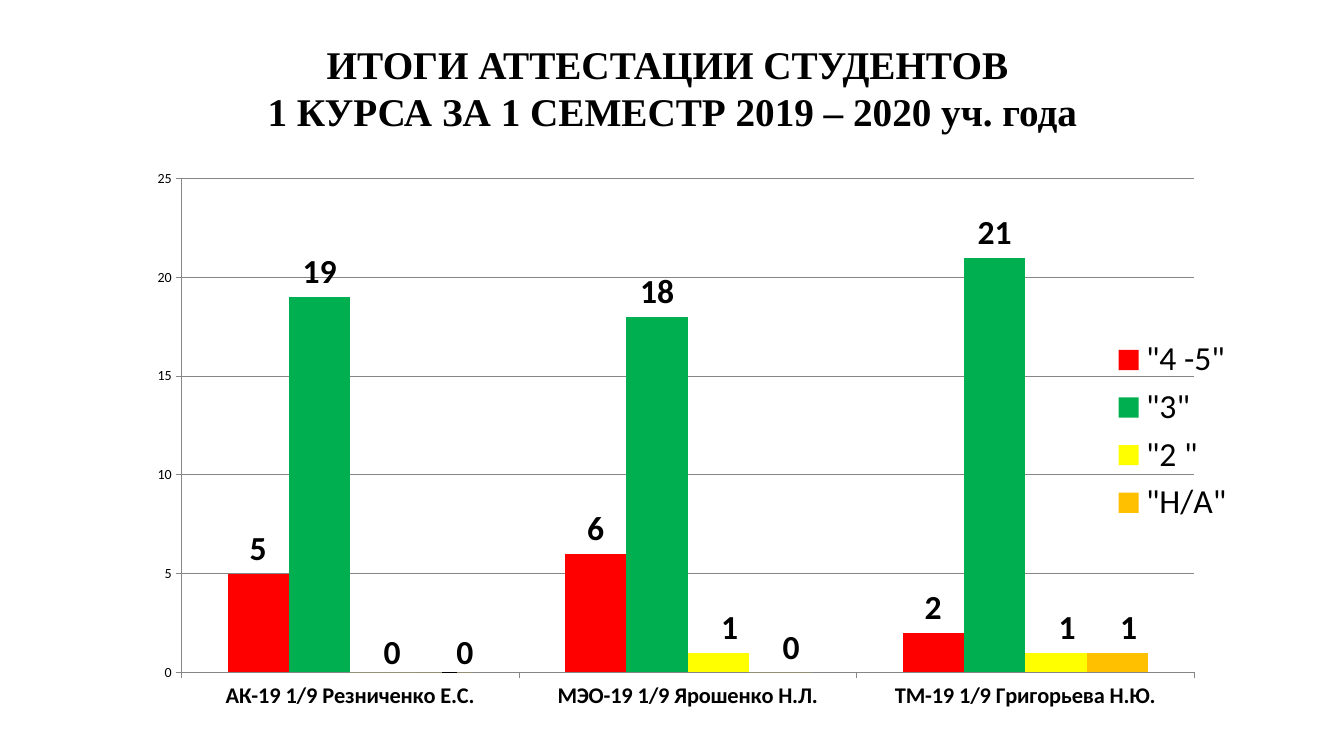
from lxml.etree import SubElement
from pptx import Presentation
from pptx.chart.data import CategoryChartData
from pptx.dml.color import RGBColor
from pptx.enum.chart import (XL_CHART_TYPE, XL_LABEL_POSITION, XL_LEGEND_POSITION,
                             XL_TICK_MARK)
from pptx.enum.text import MSO_ANCHOR, PP_ALIGN
from pptx.oxml.ns import qn
from pptx.util import Pt

COLORS = {"text": "000000", "axis": "868686", "good": "FF0000", "fair": "00B050",
          "poor": "FFFF00", "absent": "FFC000"}
TITLE_LINES = ["ИТОГИ АТТЕСТАЦИИ СТУДЕНТОВ ",
               "1 КУРСА ЗА 1 СЕМЕСТР 2019 – 2020 уч. года"]
GROUPS = ["АК-19 1/9 Резниченко Е.С.", "МЭО-19 1/9 Ярошенко Н.Л.",
          "ТМ-19 1/9 Григорьева Н.Ю."]
# name, values, colour, label shifts as fractions of the chart size
GRADES = [
    ('"4 -5"', (5, 6, 2), "good", []),
    ('"3"', (19, 18, 21), "fair", []),
    ('"2 "', (0, 1, 1), "poor", [(0.01, 0.01), (0.01, 0), (0.01, 0)]),
    ('"Н/А"', (0, 0, 1), "absent", [(0.02, 0.01), (0.01, 0), (0.01, 0)]),
]
PLOT_AREA = {"layoutTarget": "inner", "xMode": "edge", "yMode": "edge",
             "x": 0.053, "y": 0.044, "w": 0.901, "h": 0.891}


def apply(target, values):
    for name, value in values.items():
        setattr(target, name, value)


def fill_layout(layout, values):
    """Write a manual chart layout into a c:layout element."""
    manual = SubElement(layout, qn("c:manualLayout"))
    for name, value in values.items():
        SubElement(manual, qn(f"c:{name}")).set("val", str(value))


class SlideBuilder:
    def __init__(self, presentation, colors):
        self.slide = presentation.slides.add_slide(presentation.slide_layouts[6])
        self.colors = {name: RGBColor.from_string(code) for name, code in colors.items()}

    def style_font(self, font, size, bold=False, name="Calibri"):
        apply(font, {"size": Pt(size), "bold": bold, "name": name})
        font.color.rgb = self.colors["text"]

    def add_title(self, lines, left, top, width, height):
        shape = self.slide.shapes.add_textbox(Pt(left), Pt(top), Pt(width), Pt(height))
        frame = shape.text_frame
        apply(frame, {"text": "\n".join(lines), "word_wrap": False,
                      "vertical_anchor": MSO_ANCHOR.MIDDLE, "margin_bottom": Pt(25.6)})
        for paragraph in frame.paragraphs:
            paragraph.alignment = PP_ALIGN.CENTER
            self.style_font(paragraph.runs[0].font, 28, True, "Times New Roman")

    def add_column_chart(self, categories, grades, left, top, width, height):
        data = CategoryChartData()
        data.categories = categories
        for name, values, _, _ in grades:
            data.add_series(name, values)
        chart = self.slide.shapes.add_chart(
            XL_CHART_TYPE.COLUMN_CLUSTERED, Pt(left), Pt(top), Pt(width), Pt(height),
            data).chart
        apply(chart, {"has_title": False, "has_legend": True})
        self.style_font(chart.font, 10)
        apply(chart.legend, {"position": XL_LEGEND_POSITION.RIGHT,
                             "include_in_layout": False})
        self.style_font(chart.legend.font, 24)
        self.style_axes(chart)

        plot = chart.plots[0]
        apply(plot, {"gap_width": 150, "overlap": 0, "vary_by_categories": False})
        for series, (_, _, color, shifts) in zip(plot.series, grades):
            self.style_series(series, color, shifts)

        plot_area = chart.element.chart.plotArea
        layout = plot_area.find(qn("c:layout"))
        if layout is None:
            layout = SubElement(plot_area, qn("c:layout"))
            plot_area.insert(0, layout)
        fill_layout(layout, PLOT_AREA)

    def style_axes(self, chart):
        value_axis, category_axis = chart.value_axis, chart.category_axis
        apply(value_axis, {"minimum_scale": 0, "maximum_scale": 25, "major_unit": 5,
                           "has_major_gridlines": True})
        for axis, size, bold in ((value_axis, 10, False), (category_axis, 16, True)):
            axis.major_tick_mark = XL_TICK_MARK.OUTSIDE
            self.style_font(axis.tick_labels.font, size, bold)
        for owner in (value_axis, category_axis, value_axis.major_gridlines):
            line = owner.format.line
            line.color.rgb = self.colors["axis"]
            line.width = Pt(0.75)

    def style_series(self, series, color, shifts):
        series.format.fill.solid()
        series.format.fill.fore_color.rgb = self.colors[color]
        labels = series.data_labels
        apply(labels, {"show_value": True, "position": XL_LABEL_POSITION.OUTSIDE_END})
        self.style_font(labels.font, 24, True)
        for index, _ in enumerate(shifts):
            label = series.points[index].data_label
            self.style_font(label.font, 24, True)
            label.position = XL_LABEL_POSITION.OUTSIDE_END
        for element, (x, y) in zip(labels._element.findall(qn("c:dLbl")), shifts):
            layout = SubElement(element, qn("c:layout"))
            element.insert(1, layout)
            fill_layout(layout, {"x": x, "y": y})


def main():
    presentation = Presentation()
    apply(presentation, {"slide_width": Pt(960), "slide_height": Pt(540)})
    builder = SlideBuilder(presentation, COLORS)
    builder.add_title(TITLE_LINES, 180.7, 24.5, 599, 97.2)
    builder.add_column_chart(GROUPS, GRADES, 87.1, 110.2, 802.8, 396.7)
    presentation.save("out.pptx")


if __name__ == "__main__":
    main()
